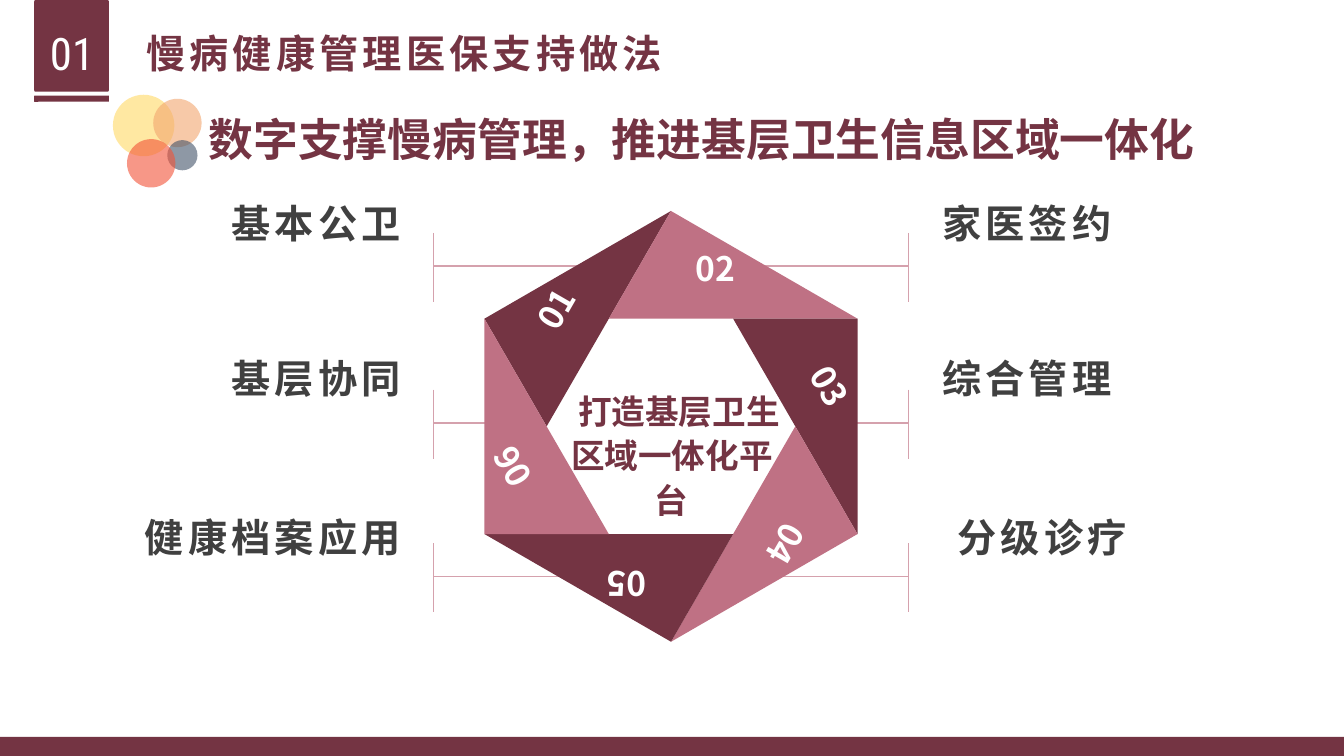
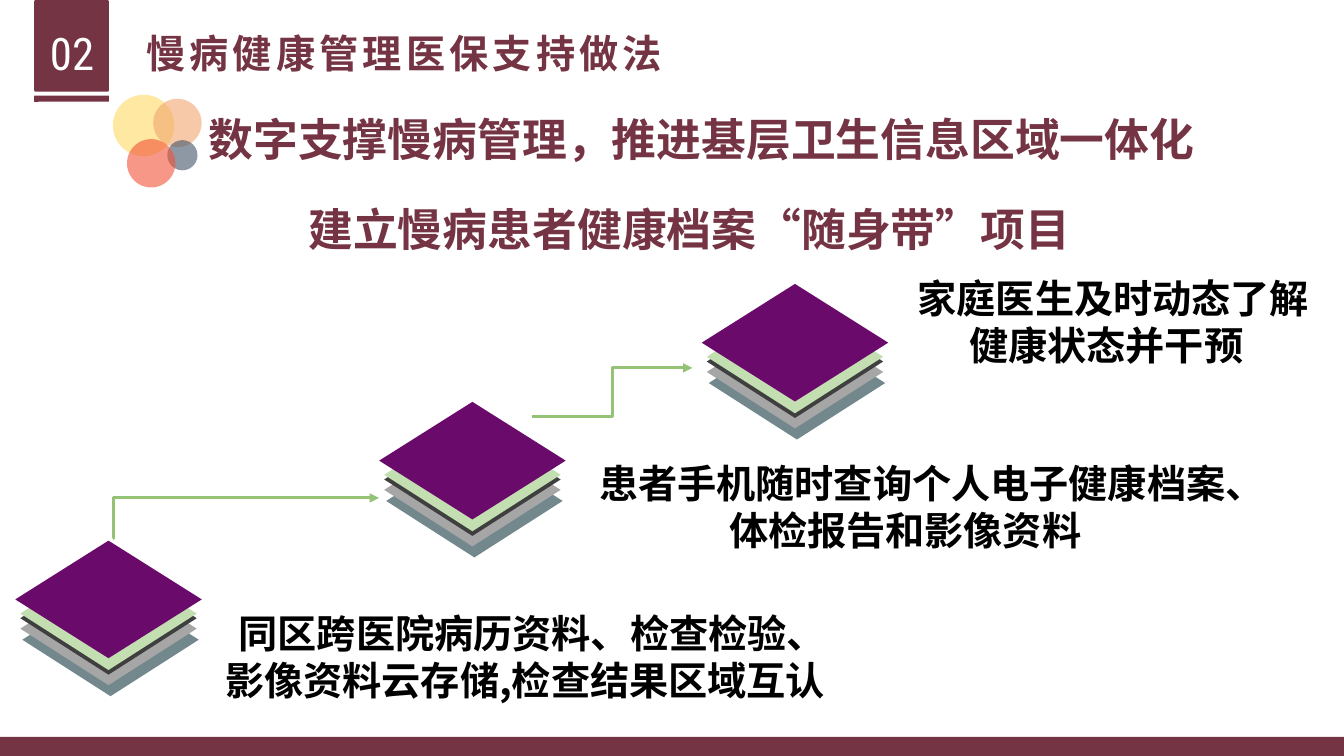
from dataclasses import dataclass
from math import cos, radians, sin, sqrt
from typing import Optional

from lxml.etree import SubElement
from pptx import Presentation
from pptx.dml.color import RGBColor
from pptx.enum.shapes import MSO_CONNECTOR, MSO_SHAPE
from pptx.enum.text import MSO_ANCHOR, MSO_AUTO_SIZE, PP_ALIGN
from pptx.oxml.ns import qn
from pptx.util import Emu, Inches, Pt

COLS, ROWS = 40, 22.5
CELL = Inches(1) // 3
SANS = "Noto Sans CJK SC"
HEX = {
    "wine": "743443", "rose": "BF7184", "pink": "D5A1AD", "gray": "404040",
    "white": "FFFFFF", "black": "000000", "yellow": "FFD965", "peach": "F2A66F",
    "slate": "44546A", "red": "F25237", "purple": "6A0A6A", "mint": "C3DEB1",
    "shade": "3F3F3F", "silver": "A6A6A6", "teal": "72888D", "green": "94C375",
}


@dataclass(frozen=True)
class Box:
    x: float
    y: float
    w: float
    h: float

    def emu(self) -> tuple:
        return tuple(cell(v) for v in (self.x, self.y, self.w, self.h))


@dataclass(frozen=True)
class Style:
    size: float = 28
    color: str = "black"
    bold: bool = True
    space: float = 0
    font: str = SANS
    align: PP_ALIGN = PP_ALIGN.LEFT
    indent: float = 0
    lead: Optional[float] = None


@dataclass(frozen=True)
class Dot:
    x: float
    y: float
    size: float
    color: str


@dataclass(frozen=True)
class Row:
    left: str
    right: str
    top: float
    tick: float
    reach: float
    shift: float = 0


@dataclass(frozen=True)
class Layer:
    dx: float
    dy: float
    w: float
    h: float
    color: str


@dataclass(frozen=True)
class Stage:
    x: float
    y: float
    text: str
    box: Box


@dataclass(frozen=True)
class Bend:
    start: tuple
    end: tuple
    turn: float


TITLE = Style(color="wine", space=3)
HEAD = Style(size=32, color="wine", indent=1.35)
NUMBER = Style(size=32, color="white", bold=False, font="Roboto Condensed", align=PP_ALIGN.CENTER)
DOTS = (
    Dot(3.36, 2.82, 1.83, "yellow"),
    Dot(4.56, 2.94, 1.44, "peach"),
    Dot(4.98, 4.17, 0.9, "slate"),
    Dot(3.78, 4.14, 1.44, "red"),
)
HUB = (19.97, 12.69)
RADIUS = 6.41
RAIL = 7.07
TICK = 2.06
LINES = (
    Row("基本公卫", "家医签约", 5.79, 6.93, 4.28),
    Row("基层协同", "综合管理", 10.41, 11.6, 2.9),
    Row("健康档案应用", "分级诊疗", 15.12, 16.17, 4.28, 0.45),
)
LAYERS = (
    Layer(0.06, 1.2, 5.25, 3.36, "teal"),
    Layer(0, 0.87, 5.25, 3.36, "silver"),
    Layer(0, 0.56, 5.25, 3.36, "shade"),
    Layer(0, 0.42, 5.25, 3.36, "mint"),
    Layer(0, 0, 5.55, 3.5, "purple"),
)
STAGES = (
    Stage(3.23, 17.84, "同区跨医院病历资料、检查检验、影像资料云存储,检查结果区域互认",
          Box(5.85, 18, 19.56, 3.12)),
    Stage(14.06, 13.71, "患者手机随时查询个人电子健康档案、体检报告和影像资料",
          Box(16.95, 13.53, 19.98, 3.12)),
    Stage(23.66, 10.2, "家庭医生及时动态了解健康状态并干预",
          Box(26.43, 8.01, 12.99, 3.12)),
)
BENDS = (
    Bend((3.36, 16.02), (11.28, 14.82), 0.004),
    Bend((15.84, 12.39), (20.61, 10.95), 0.5),
)


def cell(value: float) -> Emu:
    return Emu(round(value * CELL))


def tone(name: str) -> RGBColor:
    return RGBColor.from_string(HEX[name])


def paint(shape, color: str, alpha: int = 100) -> None:
    shape.shadow.inherit = False
    shape.fill.solid()
    shape.fill.fore_color.rgb = tone(color)
    shape.line.fill.background()
    if alpha < 100:
        fill = shape.fill._xPr.find(qn("a:solidFill"))[0]
        SubElement(fill, qn("a:alpha")).set("val", str(alpha * 1000))


def block(slide, kind: MSO_SHAPE, box: Box, color: str, alpha: int = 100):
    shape = slide.shapes.add_shape(kind, *box.emu())
    paint(shape, color, alpha)
    return shape


def write(shape, text: str, style: Style) -> None:
    frame = shape.text_frame
    frame.text = text
    frame.word_wrap = True
    frame.auto_size = MSO_AUTO_SIZE.NONE
    frame.vertical_anchor = MSO_ANCHOR.TOP
    para = frame.paragraphs[0]
    para.alignment = style.align
    if style.lead:
        para.line_spacing = style.lead
    if style.indent:
        props = para._p.get_or_add_pPr()
        props.set("marL", "0")
        props.set("indent", str(cell(style.indent)))
    for run in para.runs:
        font = run.font
        font.size = Pt(style.size)
        font.bold = style.bold
        font.name = style.font
        font.color.rgb = tone(style.color)
        props = run._r.get_or_add_rPr()
        SubElement(props, qn("a:ea")).set("typeface", style.font)
        if style.space:
            props.set("spc", str(round(style.space * 100)))


def label(slide, box: Box, text: str, style: Style) -> None:
    write(slide.shapes.add_textbox(*box.emu()), text, style)


def link(slide, kind: MSO_CONNECTOR, start: tuple, end: tuple, color: str, width: float):
    line = slide.shapes.add_connector(kind, *(cell(v) for v in (*start, *end)))
    line.line.color.rgb = tone(color)
    line.line.width = Pt(width)
    SubElement(line._element.spPr, qn("a:effectLst"))
    return line


def frame(deck, number: str):
    slide = deck.slides.add_slide(deck.slide_layouts[5])
    title = slide.shapes.title
    title.left, title.top, title.width, title.height = Box(4.05, 0.72, 17.4, 1.71).emu()
    write(title, "慢病健康管理医保支持做法", TITLE)
    for top, tall in ((0, 2.73), (2.85, 0.18)):
        bar = block(slide, MSO_SHAPE.ROUNDED_RECTANGLE, Box(1.02, top, 2.22, tall), "wine")
        bar.adjustments[0] = 0.02
    label(slide, Box(0.96, 0.63, 2.37, 1.92), number, NUMBER)
    block(slide, MSO_SHAPE.RECTANGLE, Box(0, ROWS - 0.57, COLS, 0.57), "wine")
    label(slide, Box(4.56, 3.18, 35, 1.92), "数字支撑慢病管理，推进基层卫生信息区域一体化", HEAD)
    for dot in DOTS:
        block(slide, MSO_SHAPE.OVAL, Box(dot.x, dot.y, dot.size, dot.size), dot.color, 60)
    return slide


def blade(slide, index: int) -> None:
    wide, tall = 2 * RADIUS / sqrt(3), RADIUS / 2
    turn = 60 * (index - 1)
    angle = radians(turn)
    dx, dy = wide / 4, -RADIUS * 0.75
    left = HUB[0] + dx * cos(angle) - dy * sin(angle) - wide / 2
    top = HUB[1] + dx * sin(angle) + dy * cos(angle) - tall / 2
    path = slide.shapes.build_freeform(cell(wide), cell(tall))
    path.add_line_segments([(cell(wide / 4), 0), (0, cell(tall))], close=True)
    shape = path.convert_to_shape(cell(left), cell(top))
    shape.rotation = turn % 360
    paint(shape, "rose" if index % 2 else "wine")
    write(shape, f"{index + 1:02}", Style(24, "white", align=PP_ALIGN.CENTER))
    text = shape.text_frame
    text.margin_left = text.margin_bottom = 0
    text.margin_top, text.margin_right = cell(1.1), cell(1.05)


def wheel(deck) -> None:
    slide = frame(deck, "01")
    left = Style(color="gray", space=3, align=PP_ALIGN.RIGHT)
    right = Style(color="gray", space=3)
    for row in LINES:
        for side in (-1, 1):
            rail = HUB[0] + side * RAIL
            mid = row.tick + TICK * 0.48
            link(slide, MSO_CONNECTOR.STRAIGHT, (rail, row.tick), (rail, row.tick + TICK), "pink", 1)
            link(slide, MSO_CONNECTOR.STRAIGHT, (rail, mid), (rail - side * row.reach, mid), "pink", 1)
        label(slide, Box(3, row.top, 9.22, 1.71), row.left, left)
        label(slide, Box(27.75 + row.shift, row.top, 9.22, 1.71), row.right, right)
    for index in range(6):
        blade(slide, index)
    label(slide, Box(16.23, 11.37, 7.53, 4.29), "打造基层卫生区域一体化平台",
          Style(24, "wine", align=PP_ALIGN.CENTER, indent=0.42, lead=1.1))


def steps(deck) -> None:
    slide = frame(deck, "02")
    label(slide, Box(8.46, 5.85, 24.33, 1.92), "建立慢病患者健康档案“随身带”项目",
          Style(32, "wine", indent=0.42))
    for stage in STAGES:
        for part in LAYERS:
            box = Box(stage.x + part.dx - part.w / 2, stage.y + part.dy - part.h / 2, part.w, part.h)
            block(slide, MSO_SHAPE.DIAMOND, box, part.color)
        label(slide, stage.box, stage.text, Style(align=PP_ALIGN.CENTER, indent=0.42))
    for bend in BENDS:
        line = link(slide, MSO_CONNECTOR.ELBOW, bend.start, bend.end, "green", 2.25)
        guide = SubElement(line._element.spPr.find(".//" + qn("a:avLst")), qn("a:gd"))
        guide.set("name", "adj1")
        guide.set("fmla", f"val {round(bend.turn * 100000)}")
        SubElement(line.line._get_or_add_ln(), qn("a:tailEnd")).set("type", "triangle")


def main() -> None:
    deck = Presentation()
    deck.slide_width, deck.slide_height = cell(COLS), cell(ROWS)
    wheel(deck)
    steps(deck)
    deck.save("out.pptx")


if __name__ == "__main__":
    main()
